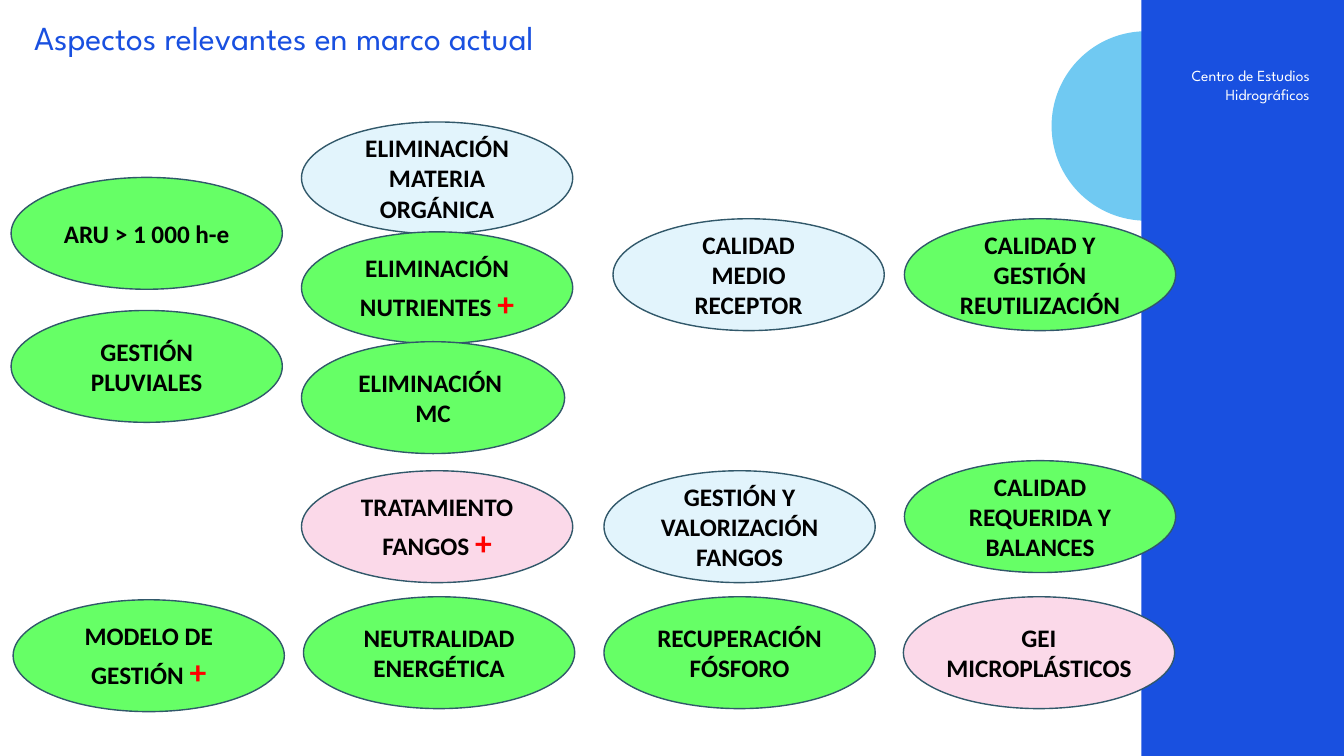
from pptx import Presentation
from pptx.dml.color import RGBColor
from pptx.enum.shapes import MSO_SHAPE
from pptx.enum.text import MSO_ANCHOR, PP_ALIGN
from pptx.util import Inches, Pt

BLUE = RGBColor(0x19, 0x50, 0xE0)
SKY = RGBColor(0x70, 0xC9, 0xF2)
PALE = RGBColor(0xE2, 0xF4, 0xFC)
PINK = RGBColor(0xFB, 0xD9, 0xE9)
GREEN = RGBColor(0x66, 0xFF, 0x66)
EDGE = RGBColor(0x31, 0x58, 0x6A)
RED = RGBColor(0xFF, 0, 0)
BLACK = RGBColor(0, 0, 0)
WHITE = RGBColor(0xFF, 0xFF, 0xFF)

TITLE = "Aspectos relevantes en marco actual"
CENTER = "Centro de Estudios Hidrográficos"
WIDE, HIGH = 2.69, 1.11
TOPICS = [
    (6.08, 2.17, PALE, "CALIDAD MEDIO RECEPTOR"),
    (2.99, 4.67, PINK, "TRATAMIENTO FANGOS +"),
    (2.99, 1.21, PALE, "ELIMINACIÓN MATERIA ORGÁNICA"),
    (2.99, 2.3, GREEN, "ELIMINACIÓN NUTRIENTES +"),
    (0.13, 5.95, GREEN, "MODELO DE GESTIÓN +"),
    (0.11, 1.76, GREEN, "ARU > 1 000 h-e"),
    (8.97, 2.17, GREEN, "CALIDAD Y GESTIÓN REUTILIZACIÓN"),
    (8.97, 4.57, GREEN, "CALIDAD REQUERIDA Y BALANCES"),
    (0.11, 3.08, GREEN, "GESTIÓN PLUVIALES"),
    (5.99, 4.67, PALE, "GESTIÓN Y VALORIZACIÓN\nFANGOS"),
    (2.99, 3.39, GREEN, "ELIMINACIÓN \nMC"),
    (3.01, 5.92, GREEN, "NEUTRALIDAD ENERGÉTICA"),
    (5.99, 5.92, GREEN, "RECUPERACIÓN FÓSFORO"),
    (8.96, 5.92, PINK, "GEI\nMICROPLÁSTICOS"),
]
NARROW = {"ELIMINACIÓN \nMC": 2.61}
FLUSH = {"GEI\nMICROPLÁSTICOS"}


def write(frame, text, size=18, font="Calibri", color=BLACK, bold=False,
          align=PP_ALIGN.CENTER, anchor=MSO_ANCHOR.MIDDLE, space=None):
    frame.word_wrap = True
    frame.vertical_anchor = anchor
    for row, line in enumerate(text.split("\n")):
        para = frame.paragraphs[0] if row == 0 else frame.add_paragraph()
        para.alignment = align
        para.line_spacing = space
        body, plus, _ = line.partition("+")
        parts = [(body, size, color)]
        if plus:
            parts.append((plus, 24, RED))
        for words, points, tint in parts:
            run = para.add_run()
            run.text = words
            run.font.name = font
            run.font.size = Pt(points)
            run.font.bold = bold
            run.font.color.rgb = tint


def draw(slide, kind, box, fill, line=None):
    shape = slide.shapes.add_shape(kind, *map(Inches, box))
    shape.shadow.inherit = False
    shape.fill.solid()
    shape.fill.fore_color.rgb = fill
    if line is None:
        shape.line.fill.background()
    else:
        shape.line.color.rgb = line
        shape.line.width = Pt(1)
    return shape


def label(slide, box, text, **style):
    area = slide.shapes.add_textbox(*map(Inches, box))
    write(area.text_frame, text, font="League Spartan",
          anchor=MSO_ANCHOR.TOP, **style)


def main():
    deck = Presentation()
    deck.slide_width, deck.slide_height = Inches(13.33), Inches(7.5)
    slide = deck.slides.add_slide(deck.slide_layouts[6])
    chord = draw(slide, MSO_SHAPE.CHORD, (10.43, 0.31, 1.88, 1.88), SKY)
    chord.rotation = 22.3
    draw(slide, MSO_SHAPE.RECTANGLE, (11.32, 0, 2.01, 7.5), BLUE)
    label(slide, (0.24, 0.16, 10.89, 0.94), TITLE, size=24, color=BLUE,
          align=PP_ALIGN.LEFT, space=0.9)
    label(slide, (11.48, 0.61, 1.61, 1.56), CENTER, size=11, color=WHITE,
          align=PP_ALIGN.RIGHT)
    for left, top, fill, text in TOPICS:
        box = (left, top, NARROW.get(text, WIDE), HIGH)
        oval = draw(slide, MSO_SHAPE.OVAL, box, fill, EDGE)
        if text in FLUSH:
            oval.text_frame.margin_left = oval.text_frame.margin_right = 0
        write(oval.text_frame, text, bold=True)
    deck.save("out.pptx")


if __name__ == "__main__":
    main()
